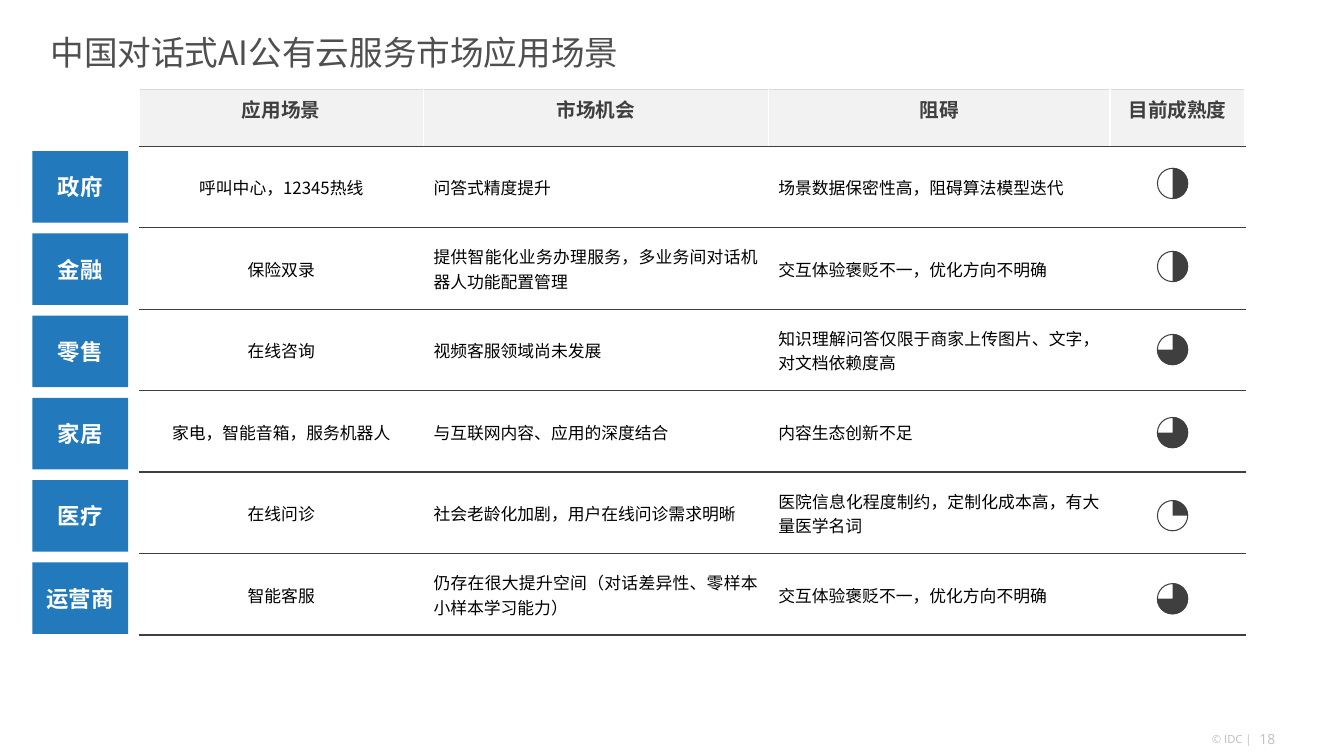
from lxml import etree
from pptx import Presentation
from pptx.dml.color import RGBColor
from pptx.enum.shapes import MSO_SHAPE
from pptx.enum.text import MSO_ANCHOR, MSO_AUTO_SIZE, PP_ALIGN
from pptx.oxml.ns import qn
from pptx.util import Inches, Pt

RECTANGLE, OVAL, ARC = MSO_SHAPE.RECTANGLE, MSO_SHAPE.OVAL, MSO_SHAPE.ARC
LEFT, CENTER, JUSTIFY = PP_ALIGN.LEFT, PP_ALIGN.CENTER, PP_ALIGN.JUSTIFY
TOP, MIDDLE = MSO_ANCHOR.TOP, MSO_ANCHOR.MIDDLE
NO_AUTOFIT = MSO_AUTO_SIZE.NONE
TITLE_ONLY = 5

CHINESE, LATIN = "Noto Sans CJK SC", "Open Sans"
COLORS = {
    "white": "FFFFFF", "black": "000000", "dark": "3F3F3F", "title": "4F4F4F",
    "header": "F2F2F2", "rule": "D9D9D9", "footer": "BFBFBF", "blue": "2279BC",
}

HEADERS = ["应用场景", "市场机会", "阻碍", "目前成熟度"]
# Sector, scenario, opportunity, obstacle, maturity in quarters
SECTORS = [
    ("政府", "呼叫中心，12345热线", "问答式精度提升", "场景数据保密性高，阻碍算法模型迭代", 2),
    ("金融", "保险双录", "提供智能化业务办理服务，多业务间对话机器人功能配置管理",
     "交互体验褒贬不一，优化方向不明确", 2),
    ("零售", "在线咨询", "视频客服领域尚未发展",
     "知识理解问答仅限于商家上传图片、文字，对文档依赖度高", 3),
    ("家居", "家电，智能音箱，服务机器人", "与互联网内容、应用的深度结合", "内容生态创新不足", 3),
    ("医疗", "在线问诊", "社会老龄化加剧，用户在线问诊需求明晰",
     "医院信息化程度制约，定制化成本高，有大量医学名词", 1),
    ("运营商", "智能客服", "仍存在很大提升空间（对话差异性、零样本小样本学习能力）",
     "交互体验褒贬不一，优化方向不明确", 3),
]
COLUMN_WIDTHS = [2.82, 3.42, 3.39, 1.34]
HEADER_HEIGHT = 0.56


def color(name):
    return RGBColor.from_string(COLORS[name])


def write(frame, text, size=12, ink="black", bold=False, align=LEFT, font=CHINESE):
    para = frame.paragraphs[0]
    para.alignment = align
    span = para.add_run()
    span.text = text
    span.font.size = Pt(size)
    span.font.bold = bold
    span.font.color.rgb = color(ink)
    span.font.name = font
    etree.SubElement(span._r.get_or_add_rPr(), qn("a:ea"), typeface=font)


def clear_margins(frame):
    frame.margin_left = frame.margin_right = frame.margin_top = frame.margin_bottom = 0


def add_shape(page, kind, left, top, width, height, fill, line=None):
    shape = page.shapes.add_shape(kind, Inches(left), Inches(top), Inches(width), Inches(height))
    shape.shadow.inherit = False
    shape.fill.solid()
    shape.fill.fore_color.rgb = color(fill)
    if line:
        shape.line.color.rgb = color(line)
        shape.line.width = Pt(0.75)
    else:
        shape.line.fill.background()
    return shape


def style_cell(cell, fill, **borders):
    properties = cell._tc.get_or_add_tcPr()
    for side, name in borders.items():
        line = etree.SubElement(properties, qn(f"a:ln{side}"), w=str(Pt(1)))
        solid = etree.SubElement(line, qn("a:solidFill"))
        etree.SubElement(solid, qn("a:srgbClr"), val=COLORS[name])
    cell.fill.solid()
    cell.fill.fore_color.rgb = color(fill)


def add_title(page, left, top, width, height):
    title = page.shapes.title
    title.left, title.top = Inches(left), Inches(top)
    title.width, title.height = Inches(width), Inches(height)
    frame = title.text_frame
    clear_margins(frame)
    frame.word_wrap = True
    frame.auto_size = NO_AUTOFIT
    frame.vertical_anchor = MIDDLE
    write(frame, "中国对话式AI公有云服务市场应用场景", size=24, ink="title")


def add_scenario_table(page, left, top, width, height):
    table = page.shapes.add_table(len(SECTORS) + 1, len(HEADERS), Inches(left), Inches(top),
                                  Inches(width), Inches(height)).table
    table.first_row = table.horz_banding = False
    for column, column_width in zip(table.columns, COLUMN_WIDTHS):
        column.width = Inches(column_width)
    for row in table.rows:
        row.height = Inches((height - HEADER_HEIGHT) / len(SECTORS))
    table.rows[0].height = Inches(HEADER_HEIGHT)

    # Header row
    for index, text in enumerate(HEADERS):
        cell = table.cell(0, index)
        cell.vertical_anchor = TOP
        write(cell.text_frame, text, size=14, ink="dark", bold=True, align=CENTER)
        style_cell(cell, "header", L="white", R="white", T="rule", B="dark")

    # One row per sector; the last column holds the maturity marks
    for row_index, (_, *texts, _) in enumerate(SECTORS, start=1):
        for index, text in enumerate(texts):
            cell = table.cell(row_index, index)
            cell.vertical_anchor = MIDDLE
            cell.margin_top, cell.margin_bottom = Inches(0.01), 0
            write(cell.text_frame, text, align=JUSTIFY if index else CENTER)
        for cell in table.rows[row_index].cells:
            style_cell(cell, "white", L="white", R="white", T="dark", B="dark")


def add_sector_labels(page, left, top, width, height):
    label_height = 0.71
    pitch = (height - label_height) / (len(SECTORS) - 1)
    for index, (name, *_) in enumerate(SECTORS):
        label = add_shape(page, RECTANGLE, left, top + index * pitch, width, label_height, "blue")
        label.text_frame.vertical_anchor = MIDDLE
        label.text_frame.word_wrap = True
        write(label.text_frame, name, size=16, ink="white", bold=True, align=CENTER)


def add_maturity_marks(page, left, top, size, height):
    pitch = (height - size) / (len(SECTORS) - 1)
    for index, (*_, quarters) in enumerate(SECTORS):
        place = (left, top + index * pitch, size, size)
        add_shape(page, OVAL, *place, "white", "dark")
        pie = add_shape(page, ARC, *place, "dark", "dark")
        # Angles count 54 per quarter turn, starting at twelve o'clock
        pie.adjustments[0] = 162
        pie.adjustments[1] = 54 * (quarters - 1)


def add_footer(page, left, top):
    notes = [("© IDC |", 8, 0, 0.02, 0.56, 0.13), ("18", 10, 0.47, 0, 0.41, 0.17)]
    for text, size, right, down, width, height in notes:
        box = page.shapes.add_textbox(Inches(left + right), Inches(top + down),
                                      Inches(width), Inches(height))
        clear_margins(box.text_frame)
        box.text_frame.word_wrap = True
        write(box.text_frame, text, size=size, ink="footer", font=LATIN)


def main():
    deck = Presentation()
    deck.slide_width, deck.slide_height = Inches(13.33), Inches(7.5)
    page = deck.slides.add_slide(deck.slide_layouts[TITLE_ONLY])
    add_title(page, 0.5, 0, 11.83, 1.03)
    add_scenario_table(page, 1.38, 0.89, 10.98, 5.41)
    add_sector_labels(page, 0.32, 1.5, 0.95, 4.79)
    add_maturity_marks(page, 11.48, 1.67, 0.3, 4.42)
    add_footer(page, 12.02, 7.25)
    deck.save("out.pptx")


if __name__ == "__main__":
    main()
